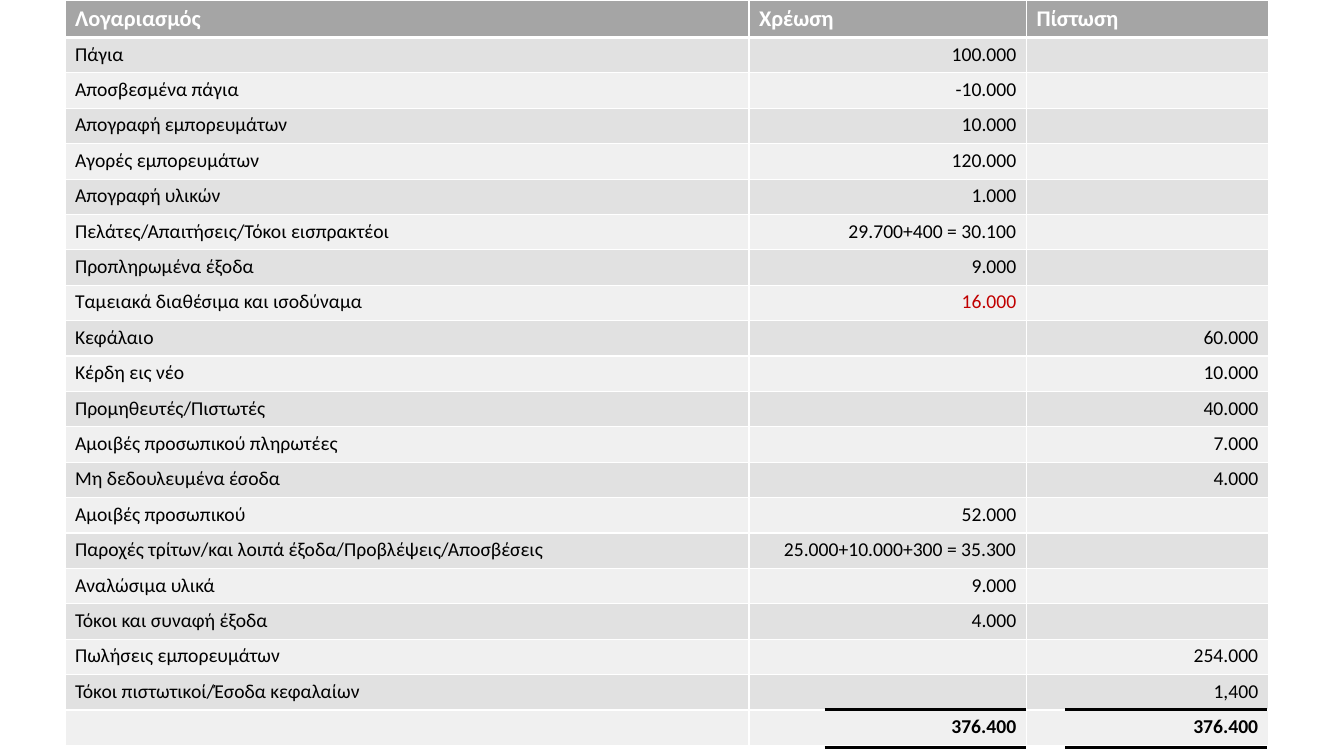
from lxml import etree
from pptx import Presentation
from pptx.dml.color import RGBColor
from pptx.enum.shapes import MSO_CONNECTOR
from pptx.enum.text import PP_ALIGN
from pptx.oxml.ns import qn
from pptx.util import Pt

LINE = MSO_CONNECTOR.STRAIGHT
LEFT, RIGHT = PP_ALIGN.LEFT, PP_ALIGN.RIGHT
FONT = "Calibri"
COLORS = {"head": "A5A5A5", "dark": "E1E1E1", "light": "F0F0F0",
          "white": "FFFFFF", "black": "000000", "red": "C00000"}

ROWS = [
    ("Λογαριασμός", "Χρέωση", "Πίστωση"),
    ("Πάγια", "100.000", ""),
    ("Αποσβεσμένα πάγια", "-10.000", ""),
    ("Απογραφή εμπορευμάτων", "10.000", ""),
    ("Αγορές εμπορευμάτων", "120.000", ""),
    ("Απογραφή υλικών", "1.000", ""),
    ("Πελάτες/Απαιτήσεις/Τόκοι εισπρακτέοι", "29.700+400 = 30.100", ""),
    ("Προπληρωμένα έξοδα", "9.000", ""),
    ("Ταμειακά διαθέσιμα και ισοδύναμα", "16.000", ""),
    ("Κεφάλαιο", "", "60.000"),
    ("Κέρδη εις νέο", "", "10.000"),
    ("Προμηθευτές/Πιστωτές", "", "40.000"),
    ("Αμοιβές προσωπικού πληρωτέες", "", "7.000"),
    ("Μη δεδουλευμένα έσοδα", "", "4.000"),
    ("Αμοιβές προσωπικού", "52.000", ""),
    ("Παροχές τρίτων/και λοιπά έξοδα/Προβλέψεις/Αποσβέσεις",
     "25.000+10.000+300 = 35.300", ""),
    ("Αναλώσιμα υλικά", "9.000", ""),
    ("Τόκοι και συναφή έξοδα", "4.000", ""),
    ("Πωλήσεις εμπορευμάτων", "", "254.000"),
    ("Τόκοι πιστωτικοί/Έσοδα κεφαλαίων", "", "1,400"),
    ("", "376.400", "376.400"),
]
RED = (8, 1)
LAST = len(ROWS) - 1
COLS = (488.6, 198.2, 172.8)
HEAD, BODY = 26.8, 25.3
X = 46.4
RULE = 144
RULE_X = (589, 761)
RULE_Y = (506.9, 534.2)


def rgb(name):
    return RGBColor.from_string(COLORS[name])


def edge(cell, side, width):
    props = cell._tc.get_or_add_tcPr()
    line = etree.SubElement(props, qn("a:" + side), w=str(Pt(width)))
    fill = etree.SubElement(line, qn("a:solidFill"))
    etree.SubElement(fill, qn("a:srgbClr"), val=COLORS["white"])


def style(cell, row, col, text):
    head = row == 0
    edge(cell, "lnL", 1)
    edge(cell, "lnR", 1)
    edge(cell, "lnT", 3 if row == 1 else 1)
    edge(cell, "lnB", 3 if head else 1)
    cell.fill.solid()
    cell.fill.fore_color.rgb = rgb("head" if head else "dark" if row % 2 else "light")
    para = cell.text_frame.paragraphs[0]
    para.alignment = RIGHT if col and not head else LEFT
    if not text:
        etree.SubElement(para._p, qn("a:endParaRPr"), sz="1400")
        return
    run = para.add_run()
    run.text = text
    font = run.font
    font.name = FONT
    font.size = Pt(16 if head else 14)
    font.bold = row in (0, LAST)
    font.color.rgb = rgb("white" if head else "red" if (row, col) == RED else "black")


def ledger(slide):
    frame = slide.shapes.add_table(len(ROWS), len(COLS), Pt(X), Pt(0),
                                   Pt(sum(COLS)), Pt(HEAD + BODY * LAST))
    table = frame.table
    table.first_row = False
    table.horz_banding = False
    for col, width in enumerate(COLS):
        table.columns[col].width = Pt(width)
    for row, texts in enumerate(ROWS):
        table.rows[row].height = Pt(BODY if row else HEAD)
        for col, text in enumerate(texts):
            style(table.cell(row, col), row, col, text)


def rules(slide):
    for x in RULE_X:
        for y in RULE_Y:
            rule = slide.shapes.add_connector(LINE, Pt(x), Pt(y), Pt(x + RULE), Pt(y))
            rule.line.color.rgb = rgb("black")
            rule.line.width = Pt(2)
            etree.SubElement(rule._element.spPr, qn("a:effectLst"))


def main():
    deck = Presentation()
    deck.slide_width, deck.slide_height = Pt(960), Pt(540)
    slide = deck.slides.add_slide(deck.slide_layouts[6])
    ledger(slide)
    rules(slide)
    deck.save("out.pptx")


if __name__ == "__main__":
    main()
